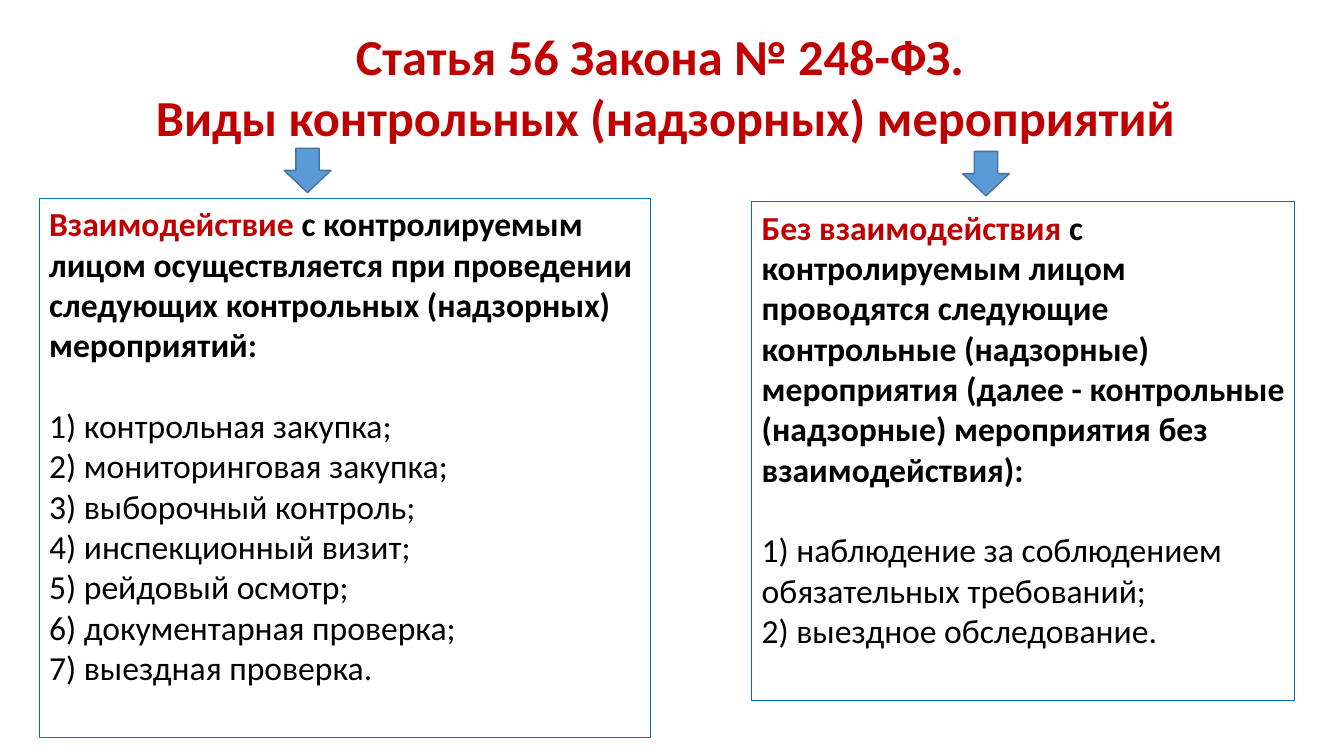
from pptx import Presentation
from pptx.dml.color import RGBColor
from pptx.enum.shapes import MSO_SHAPE as Preset
from pptx.enum.text import MSO_ANCHOR as Anchor, PP_ALIGN as Align
from pptx.util import Pt

COLORS = {
    "red": "C00000",
    "black": "000000",
    "box_line": "0070C0",
    "arrow": "5B9BD5",
    "arrow_line": "43739E",
}
BODY_SIZE = 24
BLANK_LINE = 28.8


def write(paragraph, text, size=BODY_SIZE, color="black", bold=False,
          align=Align.LEFT, after=0):
    paragraph.alignment = align
    paragraph.space_after = Pt(after)
    run = paragraph.add_run()
    run.text = text
    run.font.name = "Calibri"
    run.font.size = Pt(size)
    run.font.bold = bold
    run.font.color.rgb = RGBColor.from_string(COLORS[color])


def add_outlined(preset, bounds, line, width):
    shape = slide.shapes.add_shape(preset, *map(Pt, bounds))
    shape.shadow.inherit = False
    shape.fill.background()
    shape.line.color.rgb = RGBColor.from_string(COLORS[line])
    shape.line.width = Pt(width)
    return shape


prs = Presentation()
prs.slide_width, prs.slide_height = Pt(960), Pt(540)
slide = prs.slides.add_slide(prs.slide_layouts[6])

heading = slide.shapes.add_textbox(Pt(100.8), Pt(14.4), Pt(749.5), Pt(94.3)).text_frame
heading.word_wrap = False
heading_lines = ["Статья 56 Закона № 248-ФЗ. ", "Виды контрольных (надзорных) мероприятий"]
for index, line in enumerate(heading_lines):
    paragraph = heading.add_paragraph() if index else heading.paragraphs[0]
    write(paragraph, line, size=36, color="red", bold=True, align=Align.CENTER)

# Box bounds, arrow position, highlighted words, rest of the lead, measures
categories = [
    (
        (28, 141.7, 436.5, 385.2), (203, 105.9),
        "Взаимодействие ",
        "с контролируемым лицом осуществляется при проведении следующих "
        "контрольных (надзорных) мероприятий:",
        ["контрольная закупка;", "мониторинговая закупка;", "выборочный контроль;",
         "инспекционный визит;", "рейдовый осмотр;", "документарная проверка;",
         "выездная проверка."],
    ),
    (
        (537, 144.1, 388, 356.1), (687.6, 108.2),
        "Без взаимодействия ",
        "с контролируемым лицом проводятся следующие контрольные (надзорные) "
        "мероприятия (далее - контрольные (надзорные) мероприятия без взаимодействия):",
        ["наблюдение за соблюдением обязательных требований;",
         "выездное обследование."],
    ),
]

for box_bounds, arrow_corner, highlight, lead, measures in categories:
    body = add_outlined(Preset.RECTANGLE, box_bounds, "box_line", 0.75).text_frame
    body.word_wrap = True
    body.vertical_anchor = Anchor.TOP
    write(body.paragraphs[0], highlight, color="red", bold=True)
    write(body.paragraphs[0], lead, bold=True, after=BLANK_LINE)
    for number, measure in enumerate(measures, start=1):
        write(body.add_paragraph(), f"{number}) {measure}")

    arrow = add_outlined(Preset.DOWN_ARROW, (*arrow_corner, 33.4, 31.7), "arrow_line", 1)
    arrow.fill.solid()
    arrow.fill.fore_color.rgb = RGBColor.from_string(COLORS["arrow"])

prs.save("out.pptx")
